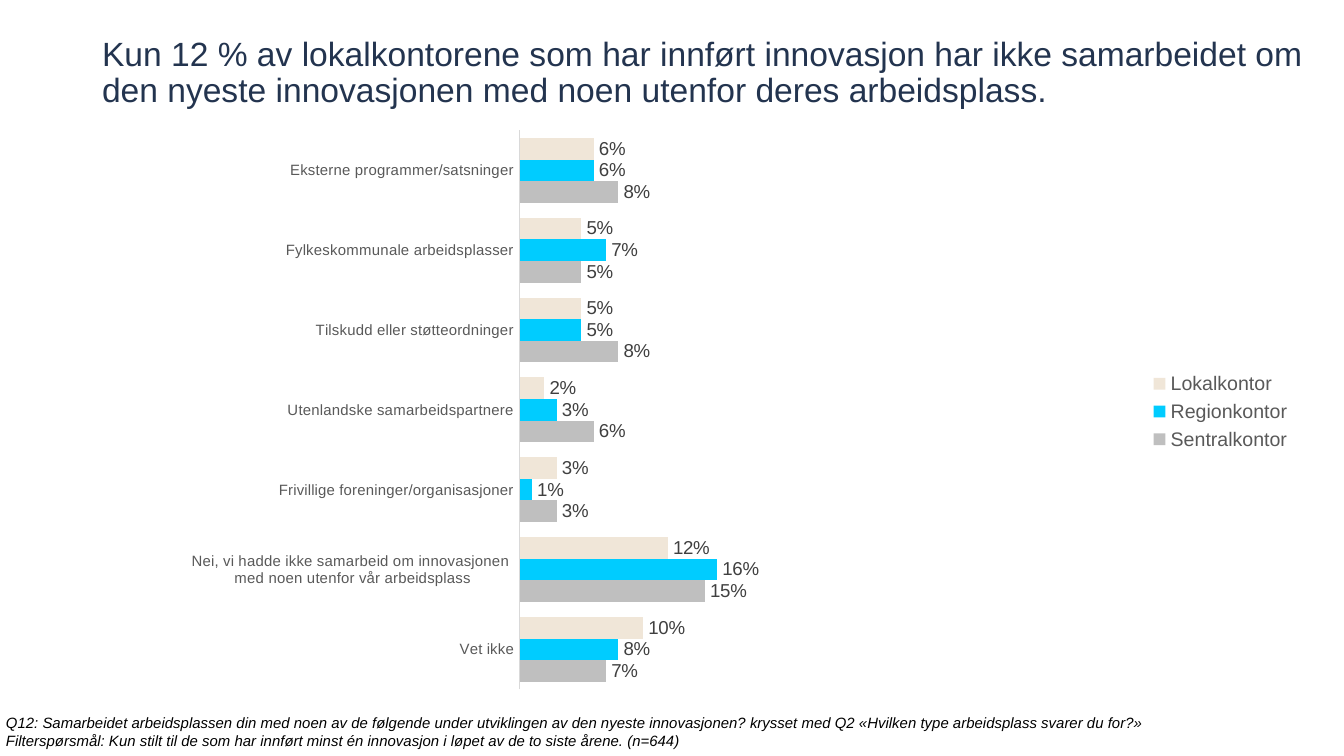
from lxml import etree
from pptx import Presentation
from pptx.chart.data import CategoryChartData
from pptx.dml.color import RGBColor
from pptx.enum.chart import XL_CHART_TYPE, XL_LABEL_POSITION, XL_LEGEND_POSITION, XL_TICK_MARK
from pptx.enum.text import MSO_ANCHOR, MSO_AUTO_SIZE, PP_ALIGN
from pptx.oxml.ns import qn
from pptx.util import Emu, Pt

BAR_CLUSTERED = XL_CHART_TYPE.BAR_CLUSTERED
OUTSIDE_END = XL_LABEL_POSITION.OUTSIDE_END
LEGEND_RIGHT = XL_LEGEND_POSITION.RIGHT
NO_TICK = XL_TICK_MARK.NONE
TOP, BOTTOM = MSO_ANCHOR.TOP, MSO_ANCHOR.BOTTOM
NO_AUTOFIT = MSO_AUTO_SIZE.NONE
LEFT = PP_ALIGN.LEFT

EMU_PER_PX = 914400 / 134.4
FONT = "Arial"
NAVY = RGBColor(0x23, 0x34, 0x4F)
BLACK = RGBColor(0x00, 0x00, 0x00)
DARK_GREY = RGBColor(0x40, 0x40, 0x40)
MID_GREY = RGBColor(0x59, 0x59, 0x59)
AXIS_GREY = RGBColor(0xD9, 0xD9, 0xD9)
SILVER = RGBColor(0xBF, 0xBF, 0xBF)
CYAN = RGBColor(0x00, 0xCC, 0xFF)
SAND = RGBColor(0xF0, 0xE6, 0xD8)

HEADLINE = (
    "Kun 12 % av lokalkontorene som har innført innovasjon har ikke samarbeidet om "
    "den nyeste innovasjonen med noen utenfor deres arbeidsplass."
)
FOOTNOTES = [
    "Q12: Samarbeidet arbeidsplassen din med noen av de følgende under utviklingen av "
    "den nyeste innovasjonen? krysset med Q2 «Hvilken type arbeidsplass svarer du for?»",
    "Filterspørsmål: Kun stilt til de som har innført minst én innovasjon i løpet av "
    "de to siste årene. (n=644)",
]
PARTNERS = [
    "Vet ikke",
    "Nei, vi hadde ikke samarbeid om innovasjonen \nmed noen utenfor vår arbeidsplass",
    "Frivillige foreninger/organisasjoner",
    "Utenlandske samarbeidspartnere",
    "Tilskudd eller støtteordninger",
    "Fylkeskommunale arbeidsplasser",
    "Eksterne programmer/satsninger",
]
OFFICES = [
    ("Sentralkontor", SILVER, [0.07, 0.15, 0.03, 0.06, 0.08, 0.05, 0.08]),
    ("Regionkontor", CYAN, [0.08, 0.16, 0.01, 0.03, 0.05, 0.07, 0.06]),
    ("Lokalkontor", SAND, [0.10, 0.12, 0.03, 0.02, 0.05, 0.05, 0.06]),
]
PLOT_AREA = {"x": 0.285, "y": 0.034, "w": 0.68, "h": 0.927}


def px(length):
    """Turn whole pixels into EMU."""
    return Emu(round(length * EMU_PER_PX))


def style_font(font, size, color, italic=False):
    """Set the typeface, size and colour of a font."""
    font.name = FONT
    font.size = Pt(size)
    font.color.rgb = color
    font.italic = italic


def write_text(shape, paragraphs, *, size, color, italic=False, anchor=TOP, spacing=1.0):
    """Fill a shape with wrapped, left-aligned paragraphs in one format."""
    frame = shape.text_frame
    frame.word_wrap = True
    frame.auto_size = NO_AUTOFIT
    frame.vertical_anchor = anchor
    frame.margin_left = frame.margin_right = frame.margin_top = frame.margin_bottom = 0
    frame.text = "\n".join(paragraphs)
    for paragraph in frame.paragraphs:
        paragraph.alignment = LEFT
        paragraph.line_spacing = spacing
        for run in paragraph.runs:
            style_font(run.font, size, color, italic)


def add_headline(slide):
    """Place the headline in the title placeholder."""
    title = slide.shapes.title
    title.left, title.top, title.width, title.height = map(px, (102, 66, 1230, 44))
    write_text(title, [HEADLINE], size=18, color=NAVY, anchor=BOTTOM, spacing=0.9)


def add_footnotes(slide):
    """Add the survey question and filter below the chart."""
    box = slide.shapes.add_textbox(*map(px, (6, 714, 1271, 36)))
    write_text(box, FOOTNOTES, size=8, color=BLACK, italic=True)


def set_plot_area(chart, fractions):
    """Fix the inner plot area as fractions of the chart."""
    plot_area = chart._chartSpace.find(".//" + qn("c:plotArea"))
    for old_layout in plot_area.findall(qn("c:layout")):
        plot_area.remove(old_layout)
    layout = etree.Element(qn("c:layout"))
    manual = etree.SubElement(layout, qn("c:manualLayout"))
    settings = {"layoutTarget": "inner", "xMode": "edge", "yMode": "edge", **fractions}
    for tag, value in settings.items():
        etree.SubElement(manual, qn("c:" + tag)).set("val", str(value))
    plot_area.insert(0, layout)


def style_axes(chart):
    """Show a plain category axis and hide the value axis."""
    partners = chart.category_axis
    partners.major_tick_mark = partners.minor_tick_mark = NO_TICK
    partners.has_major_gridlines = False
    partners.format.line.color.rgb = AXIS_GREY
    partners.format.line.width = Pt(0.75)
    style_font(partners.tick_labels.font, 8, MID_GREY)
    shares = chart.value_axis
    shares.minimum_scale, shares.maximum_scale = -0.1, 0.6
    shares.has_major_gridlines = False
    shares.visible = False


def style_series(series, color):
    """Colour the bars of one office type and label them."""
    series.invert_if_negative = False
    series.format.fill.solid()
    series.format.fill.fore_color.rgb = color
    labels = series.data_labels
    labels.show_value = True
    labels.number_format = "0%"
    labels.number_format_is_linked = False
    labels.position = OUTSIDE_END
    style_font(labels.font, 10, DARK_GREY)


def add_partner_chart(slide):
    """Add the bar chart of partners by office type."""
    data = CategoryChartData(number_format="0%")
    data.categories = PARTNERS
    for office, _, shares in OFFICES:
        data.add_series(office, shares)
    frame = slide.shapes.add_chart(BAR_CLUSTERED, *map(px, (34, 110, 1271, 603)), data)
    chart = frame.chart
    chart.has_title = False
    style_font(chart.font, 10, BLACK)
    chart.has_legend = True
    chart.legend.position = LEGEND_RIGHT
    chart.legend.include_in_layout = False
    style_font(chart.legend.font, 10.5, MID_GREY)
    bars = chart.plots[0]
    bars.gap_width, bars.overlap = 70, 0
    bars.vary_by_categories = False
    for series, (_, color, _) in zip(bars.series, OFFICES):
        style_series(series, color)
    style_axes(chart)
    set_plot_area(chart, PLOT_AREA)


def main():
    """Build and save the slide."""
    presentation = Presentation()
    presentation.slide_width, presentation.slide_height = px(1344), px(756)
    slide = presentation.slides.add_slide(presentation.slide_layouts[5])
    add_headline(slide)
    add_partner_chart(slide)
    add_footnotes(slide)
    presentation.save("out.pptx")


if __name__ == "__main__":
    main()
